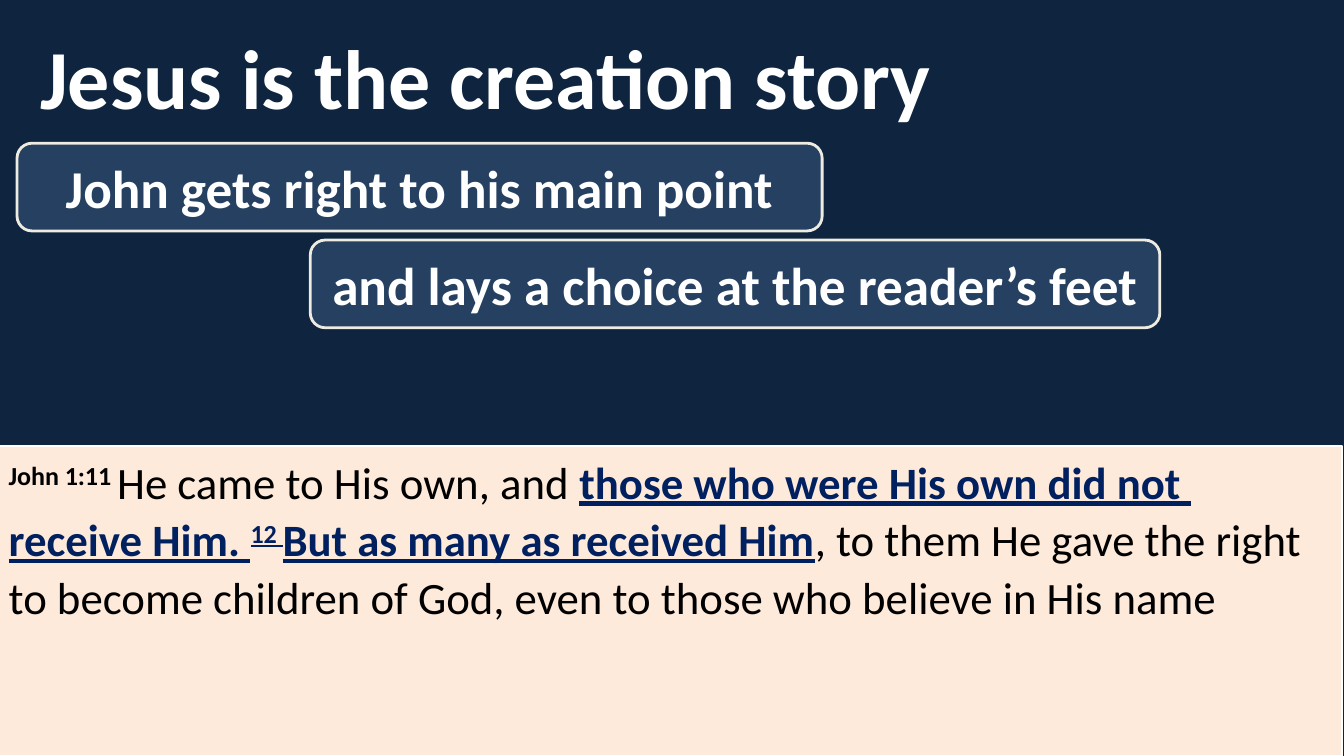
from pptx import Presentation
from pptx.dml.color import RGBColor
from pptx.enum.shapes import MSO_SHAPE
from pptx.enum.text import MSO_ANCHOR, MSO_AUTO_SIZE, PP_ALIGN
from pptx.util import Cm, Pt

NIGHT = RGBColor(0x0F, 0x24, 0x3E)
BLUE = RGBColor(0x25, 0x40, 0x61)
IVORY = RGBColor(0xEE, 0xEC, 0xE1)
PEACH = RGBColor(0xFD, 0xEA, 0xDA)
NAVY = RGBColor(0x00, 0x20, 0x60)
WHITE = RGBColor(0xFF, 0xFF, 0xFF)
BLACK = RGBColor(0x00, 0x00, 0x00)


def add_run(paragraph, text, size, color, bold=True):
    run = paragraph.add_run()
    run.text = text
    run.font.name = "Calibri"
    run.font.size = Pt(size)
    run.font.bold = bold
    run.font.color.rgb = color
    return run


def add_panel(shape_type, left, top, width, height, fill, line, line_width):
    shape = slide.shapes.add_shape(shape_type, Cm(left), Cm(top), Cm(width), Cm(height))
    shape.shadow.inherit = False
    shape.fill.solid()
    shape.fill.fore_color.rgb = fill
    shape.line.color.rgb = line
    shape.line.width = Pt(line_width)
    shape.text_frame.word_wrap = True
    return shape


presentation = Presentation()
presentation.slide_width = Cm(33.87)
presentation.slide_height = Cm(19.05)
slide = presentation.slides.add_slide(presentation.slide_layouts[5])
slide.background.fill.solid()
slide.background.fill.fore_color.rgb = NIGHT

# Title
title = slide.shapes.title
title.left, title.top, title.width, title.height = Cm(0.43), Cm(0.64), Cm(24.1), Cm(2.54)
title.text_frame.auto_size = MSO_AUTO_SIZE.NONE
title.text_frame.vertical_anchor = MSO_ANCHOR.MIDDLE
paragraph = title.text_frame.paragraphs[0]
paragraph.alignment = PP_ALIGN.CENTER
add_run(paragraph, "Jesus is the creation story ", 60, WHITE)

# Scripture panel
scripture = add_panel(MSO_SHAPE.RECTANGLE, -0.03, 11.23, 33.86, 7.82, PEACH, WHITE, 1.5)
scripture.text_frame.vertical_anchor = MSO_ANCHOR.TOP
paragraph = scripture.text_frame.paragraphs[0]
paragraph.alignment = PP_ALIGN.LEFT
paragraph.line_spacing = 1.07
paragraph.space_after = Pt(8)

# Passage parts: text, color, bold, underlined, superscript
passage = [
    ("John 1:11 ", BLACK, True, False, True),
    ("He came to His own, and ", BLACK, False, False, False),
    ("those who were His own did not  receive Him. ", NAVY, True, True, False),
    ("12 ", NAVY, True, True, True),
    ("But as many as received Him", NAVY, True, True, False),
    (", to them He gave the right to become children of God, even to those "
     "who believe in His name", BLACK, False, False, False),
]
for text, color, bold, underlined, superscript in passage:
    run = add_run(paragraph, text, 32, color, bold)
    run.font.underline = underlined
    if superscript:
        run.font._element.set("baseline", "30000")

# Callouts
callouts = [
    ("and lays a choice at the reader’s feet", 7.82, 6.05, 21.41),
    ("John gets right to his main point", 0.43, 3.61, 20.29),
]
for text, left, top, width in callouts:
    callout = add_panel(MSO_SHAPE.ROUNDED_RECTANGULAR_CALLOUT, left, top, width, 2.21,
                        BLUE, IVORY, 2)
    for index, value in enumerate((-0.22, 0.5, 0.17)):
        callout.adjustments[index] = value
    callout.text_frame.vertical_anchor = MSO_ANCHOR.MIDDLE
    paragraph = callout.text_frame.paragraphs[0]
    paragraph.alignment = PP_ALIGN.CENTER
    add_run(paragraph, text, 38, WHITE)

presentation.save("out.pptx")
